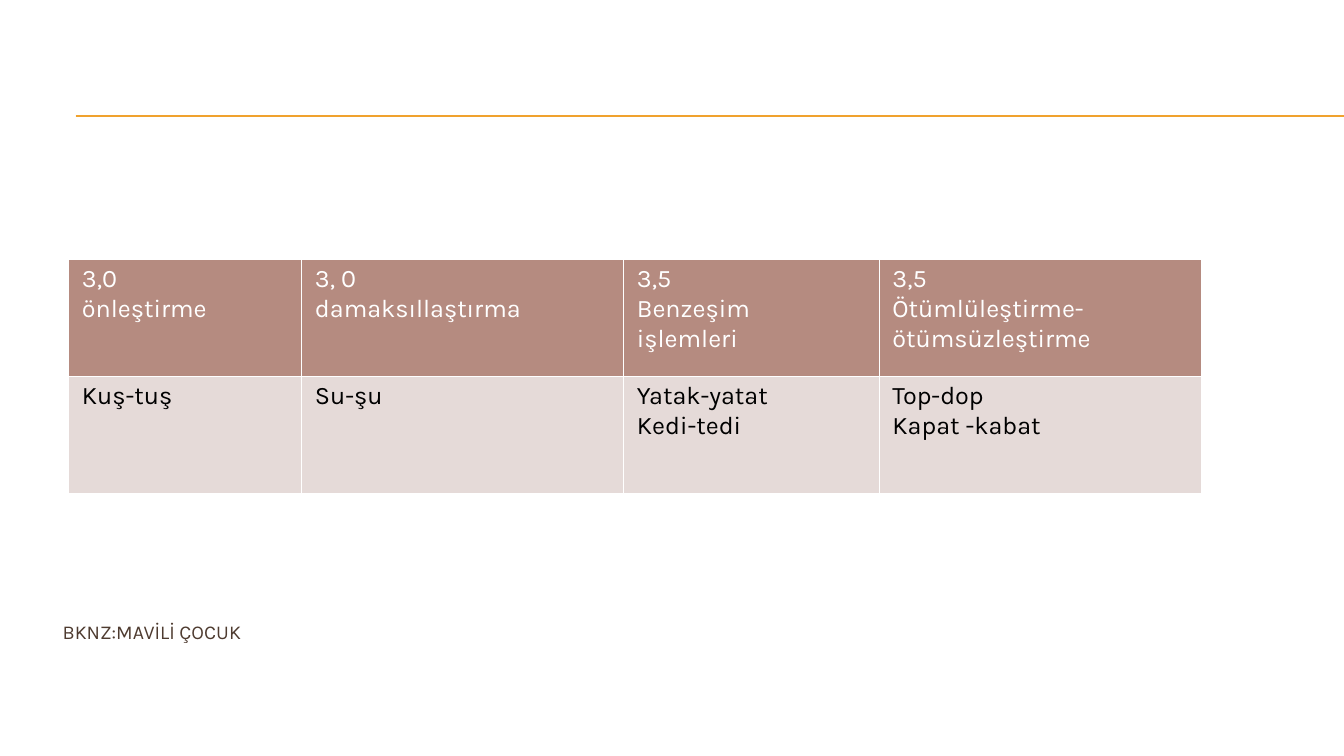
from pptx import Presentation
from pptx import util as u
from pptx.dml.color import RGBColor
from pptx.enum import shapes, text
from pptx.oxml import ns, xmlchemy

Pt = u.Pt
FONT = "Karla"
GOLD, BROWN, WHITE, BLACK = "F0A22E", "4E3B30", "FFFFFF", "000000"
HEADER_FILL, BODY_FILL = "B58B80", "E5DAD8"
COLUMN_WIDTHS = [166.5, 230, 182.5, 230]
ROW_HEIGHT = 83.5
ROWS = [
    ["3,0\nönleştirme", "3, 0\ndamaksıllaştırma", "3,5\nBenzeşim\nişlemleri",
     "3,5\nÖtümlüleştirme-ötümsüzleştirme"],
    ["Kuş-tuş", "Su-şu", "Yatak-yatat\nKedi-tedi", "Top-dop\nKapat -kabat"],
]


def colour(value):
    return RGBColor.from_string(value)


def add_child(parent, tag, **attributes):
    child = xmlchemy.OxmlElement(tag)
    for name, value in attributes.items():
        child.set(name, value)
    parent.append(child)
    return child


def write_text(frame, content, size=18, color=BLACK):
    frame.word_wrap = True
    for index, line in enumerate(content.split("\n")):
        para = frame.paragraphs[0] if index == 0 else frame.add_paragraph()
        para.alignment = text.PP_ALIGN.LEFT
        span = para.add_run()
        span.text = line
        span.font.name = FONT
        span.font.size = Pt(size)
        span.font.bold = False
        span.font.color.rgb = colour(color)


def add_rule(page, top):
    rule = page.shapes.add_connector(
        shapes.MSO_CONNECTOR.STRAIGHT, Pt(54), Pt(top), Pt(960), Pt(top))
    rule.line.color.rgb = colour(GOLD)
    rule.line.width = Pt(0.75)
    add_child(rule._element.find(ns.qn("p:spPr")), "a:effectLst")


def place_title(page, content):
    title = page.shapes.title
    title.left, title.top = Pt(37.5), Pt(418.5)
    title.width, title.height = Pt(912), Pt(66)
    title.text_frame.auto_size = text.MSO_AUTO_SIZE.NONE
    title.text_frame.vertical_anchor = text.MSO_ANCHOR.MIDDLE
    write_text(title.text_frame, content, size=14, color=BROWN)


def format_cell(cell, content, fill, color):
    cell.margin_left = cell.margin_right = Pt(9.5)
    cell.margin_top = cell.margin_bottom = Pt(3.6)
    write_text(cell.text_frame, content, color=color)
    properties = cell._tc.get_or_add_tcPr()
    for side in "LRTB":
        border = add_child(properties, f"a:ln{side}", w=str(Pt(1)))
        add_child(add_child(border, "a:solidFill"), "a:srgbClr", val=WHITE)
    cell.fill.solid()
    cell.fill.fore_color.rgb = colour(fill)


def add_examples_table(page):
    table = page.shapes.add_table(
        len(ROWS), len(COLUMN_WIDTHS), Pt(49), Pt(185.5),
        Pt(sum(COLUMN_WIDTHS)), Pt(ROW_HEIGHT * len(ROWS))).table
    for column, width in zip(table.columns, COLUMN_WIDTHS):
        column.width = Pt(width)
    styles = [(HEADER_FILL, WHITE), (BODY_FILL, BLACK)]
    for row, contents, (fill, color) in zip(table.rows, ROWS, styles):
        row.height = Pt(ROW_HEIGHT)
        for cell, content in zip(row.cells, contents):
            format_cell(cell, content, fill, color)


def main():
    deck = Presentation()
    deck.slide_width, deck.slide_height = Pt(960), Pt(540)
    page = deck.slides.add_slide(deck.slide_layouts[5])
    for top in (82.8, 83.5):
        add_rule(page, top)
    place_title(page, "BKNZ:MAVİLİ ÇOCUK")
    add_examples_table(page)
    deck.save("out.pptx")


if __name__ == "__main__":
    main()
